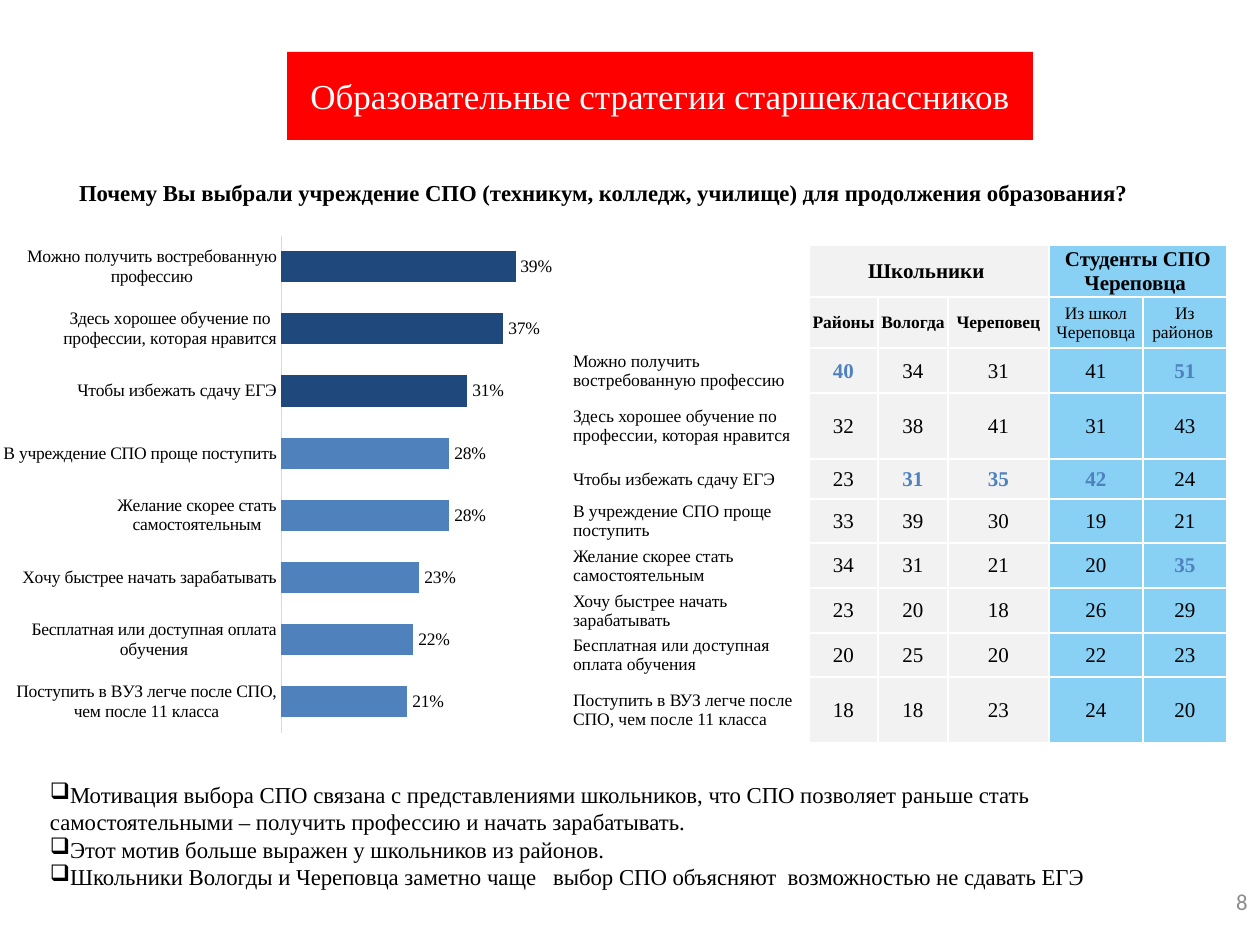
import pptx
import pptx.chart.data
import pptx.dml.color
import pptx.enum.chart
import pptx.enum.text
import pptx.oxml
import pptx.oxml.ns
import pptx.util

RGBColor = pptx.dml.color.RGBColor
BLACK = RGBColor(0x00, 0x00, 0x00)
WHITE = RGBColor(0xFF, 0xFF, 0xFF)
RED = RGBColor(0xFF, 0x00, 0x00)
NAVY = RGBColor(0x1F, 0x49, 0x7D)
BLUE = RGBColor(0x4F, 0x81, 0xBD)
SKY = RGBColor(0x88, 0xD0, 0xF4)
PALE = RGBColor(0xF2, 0xF2, 0xF2)
AXIS_GREY = RGBColor(0xD9, 0xD9, 0xD9)
NUMBER_GREY = RGBColor(0x8C, 0x8C, 0x8C)
SERIF = "Times New Roman"
ALIGN = pptx.enum.text.PP_ALIGN
MIDDLE = pptx.enum.text.MSO_ANCHOR.MIDDLE
NAMESPACE = pptx.oxml.ns.nsdecls("a")


def px(*lengths):
    return [round(length * 914400 / 126) for length in lengths]


def format_text(holder, size, color=BLACK, bold=False, align=ALIGN.LEFT, font=SERIF):
    holder.word_wrap = True
    holder.vertical_anchor = MIDDLE
    for paragraph in holder.paragraphs:
        paragraph.alignment = align
        for run in paragraph.runs:
            run.font.name = font
            run.font.size = pptx.util.Pt(size)
            run.font.bold = bold
            run.font.color.rgb = color


presentation = pptx.Presentation()
presentation.slide_width, presentation.slide_height = px(1260, 945)
slide = presentation.slides.add_slide(presentation.slide_layouts[5])

# Title
title = slide.shapes.title
title.left, title.top, title.width, title.height = px(287, 52, 746, 88)
title.fill.solid()
title.fill.fore_color.rgb = RED
title.text_frame.text = "Образовательные стратегии старшеклассников"
title.text_frame.auto_size = pptx.enum.text.MSO_AUTO_SIZE.NONE
format_text(title.text_frame, 20, WHITE, align=ALIGN.CENTER)

# Question, conclusions and slide number
question = slide.shapes.add_textbox(*px(69, 173, 1128, 38))
question.text_frame.text = (
    "Почему Вы выбрали учреждение СПО (техникум, колледж, училище) "
    "для продолжения образования?")
format_text(question.text_frame, 13, bold=True)

conclusions = slide.shapes.add_textbox(*px(40, 775, 1187, 121))
conclusions.text_frame.text = "\n".join([
    "Мотивация выбора СПО связана с представлениями школьников, что СПО позволяет "
    "раньше стать самостоятельными – получить профессию и начать зарабатывать.",
    "Этот мотив больше выражен у школьников из районов.",
    "Школьники Вологды и Череповца заметно чаще   выбор СПО объясняют  "
    "возможностью не сдавать ЕГЭ",
])
format_text(conclusions.text_frame, 13)
for paragraph in conclusions.text_frame.paragraphs:
    paragraph._p.get_or_add_pPr().append(
        pptx.oxml.parse_xml(f'<a:buChar {NAMESPACE} char="❑"/>'))

for text_box in (question, conclusions):
    text_box.text_frame.margin_left, text_box.text_frame.margin_right = px(10, 10)
    text_box.text_frame.margin_top, text_box.text_frame.margin_bottom = px(5, 5)

slide_number = slide.shapes.add_textbox(*px(1182, 876, 78, 50))
slide_number.text_frame.text = "8"
format_text(slide_number.text_frame, 13, NUMBER_GREY, align=ALIGN.RIGHT, font="Calibri")

# Reasons: share of all answers, then percentages by group
reasons = [
    ("Можно получить востребованную профессию", 0.39, (40, 34, 31, 41, 51)),
    ("Здесь хорошее обучение по профессии, которая нравится", 0.37, (32, 38, 41, 31, 43)),
    ("Чтобы избежать сдачу ЕГЭ", 0.31, (23, 31, 35, 42, 24)),
    ("В учреждение СПО проще поступить", 0.28, (33, 39, 30, 19, 21)),
    ("Желание скорее стать самостоятельным", 0.28, (34, 31, 21, 20, 35)),
    ("Хочу быстрее начать зарабатывать", 0.23, (23, 20, 18, 26, 29)),
    ("Бесплатная или доступная оплата обучения", 0.22, (20, 25, 20, 22, 23)),
    ("Поступить в ВУЗ легче после СПО, чем после 11 класса", 0.21, (18, 18, 23, 24, 20)),
]

# Bar chart, filled from the bottom up
chart_data = pptx.chart.data.CategoryChartData(number_format="0%")
chart_data.categories = [reason for reason, share, groups in reversed(reasons)]
chart_data.add_series("Series 1", [share for reason, share, groups in reversed(reasons)])
chart = slide.shapes.add_chart(
    pptx.enum.chart.XL_CHART_TYPE.BAR_CLUSTERED, *px(0, 214, 552, 546), chart_data).chart
chart.has_legend = False
chart.has_title = False
chart.font.name = SERIF
chart.font.size = pptx.util.Pt(10)
chart.font.color.rgb = BLACK

category_axis = chart.category_axis
category_axis.major_tick_mark = pptx.enum.chart.XL_TICK_MARK.NONE
category_axis.format.line.color.rgb = AXIS_GREY
category_axis.format.line.width = pptx.util.Pt(0.75)
value_axis = chart.value_axis
value_axis.visible = False
value_axis.has_major_gridlines = False
value_axis.minimum_scale = 0
value_axis.maximum_scale = 0.45

plot = chart.plots[0]
plot.gap_width = 100
plot.vary_by_categories = False
plot.has_data_labels = True
labels = plot.data_labels
labels.show_value = True
labels.number_format = "0%"
labels.number_format_is_linked = False
labels.position = pptx.enum.chart.XL_LABEL_POSITION.OUTSIDE_END
series = plot.series[0]
series.format.fill.solid()
series.format.fill.fore_color.rgb = BLUE
for index in (5, 6, 7):
    point_fill = series.points[index].format.fill
    point_fill.solid()
    point_fill.fore_color.rgb = NAVY

# Fixed inner plot area
plot_area = chart._chartSpace.chart.plotArea
for old_layout in plot_area.findall(pptx.oxml.ns.qn("c:layout")):
    plot_area.remove(old_layout)
plot_area.insert(0, pptx.oxml.parse_xml(
    f'<c:layout {pptx.oxml.ns.nsdecls("c")}><c:manualLayout>'
    '<c:layoutTarget val="inner"/><c:xMode val="edge"/><c:yMode val="edge"/>'
    '<c:x val="0.51"/><c:y val="0.04"/><c:w val="0.49"/><c:h val="0.91"/>'
    '</c:manualLayout></c:layout>'))

# Table of groups
column_widths = [237, 69, 70, 101, 94, 84]
row_heights = [52, 51, 45, 66, 40, 44, 45, 45, 44, 66]
table = slide.shapes.add_table(
    len(row_heights), len(column_widths),
    *px(572, 245, sum(column_widths), sum(row_heights))).table
table.first_row = False
table.horz_banding = False
for column, width in zip(table.columns, px(*column_widths)):
    column.width = width
for row, height in zip(table.rows, px(*row_heights)):
    row.height = height
table.cell(0, 1).merge(table.cell(0, 3))
table.cell(0, 4).merge(table.cell(0, 5))

rows = [
    ["", "Школьники ", "", "", "Студенты СПО Череповца ", ""],
    ["", "Районы", "Вологда", "Череповец", "Из школ Череповца", "Из районов "],
] + [[reason, *map(str, groups)] for reason, share, groups in reasons]
highlights = {(2, 1), (2, 5), (4, 2), (4, 3), (4, 4), (6, 5)}

for row_index, row in enumerate(rows):
    for column_index, text in enumerate(row):
        cell = table.cell(row_index, column_index)
        if column_index == 0:
            cell.fill.background()
        else:
            cell.fill.solid()
            cell.fill.fore_color.rgb = PALE if column_index < 4 else SKY
        cell.margin_left, cell.margin_right, cell.margin_top, cell.margin_bottom = px(1, 1, 1, 0)
        cell.vertical_anchor = MIDDLE
        if text:
            cell.text_frame.text = text
            highlighted = (row_index, column_index) in highlights
            header = row_index == 0 or (row_index == 1 and column_index < 4)
            format_text(
                cell.text_frame,
                10 if row_index == 1 or column_index == 0 else 12,
                BLUE if highlighted else BLACK,
                highlighted or header,
                ALIGN.CENTER if column_index else ALIGN.LEFT)
        for position, side in enumerate("LRTB"):
            cell._tc.get_or_add_tcPr().insert(position, pptx.oxml.parse_xml(
                f'<a:ln{side} {NAMESPACE} w="12700"><a:solidFill>'
                f'<a:srgbClr val="{WHITE}"/></a:solidFill></a:ln{side}>'))

presentation.save("out.pptx")
